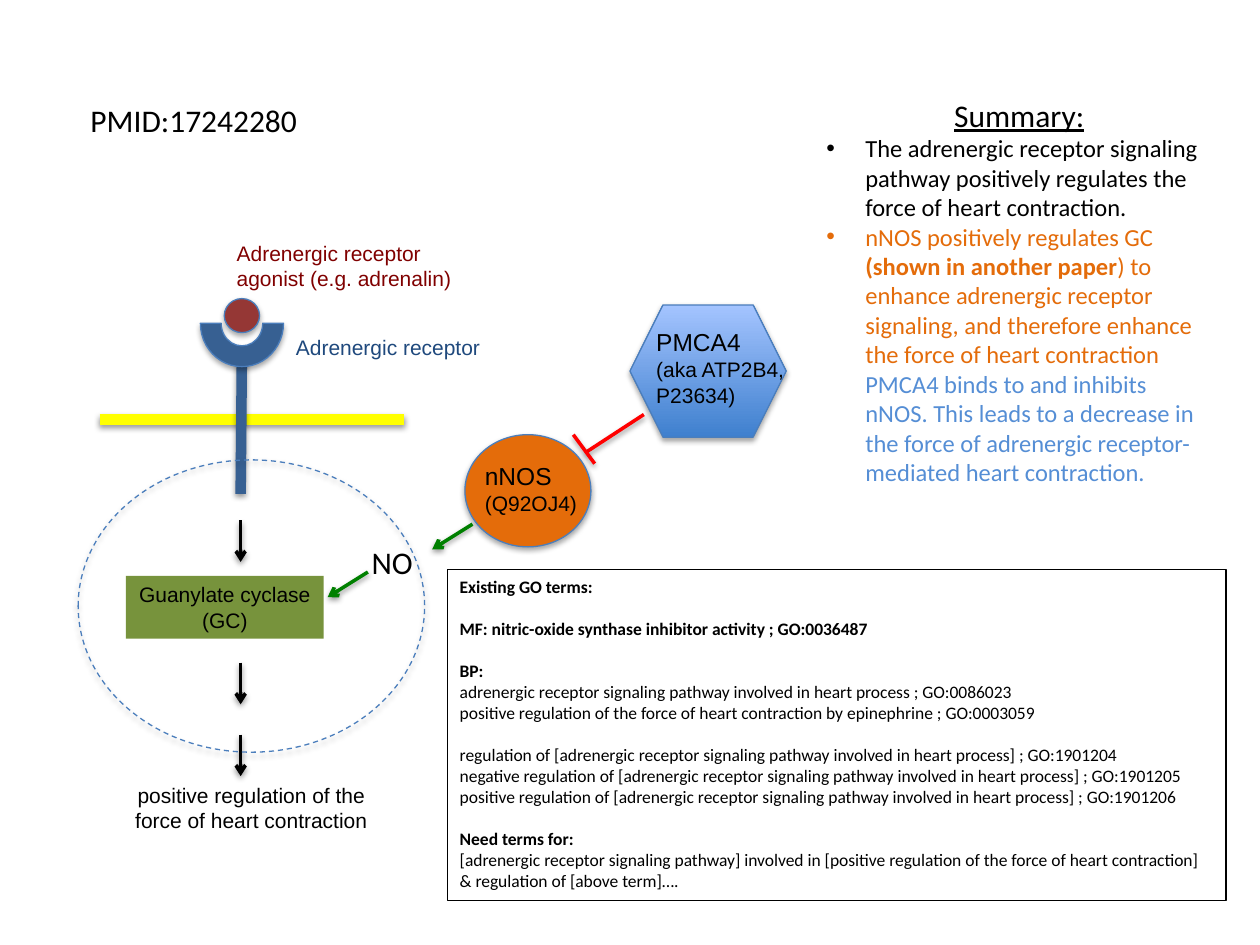
from lxml import etree
from pptx import Presentation, util as u
from pptx.dml.color import RGBColor
from pptx.enum import dml, shapes, text
from pptx.oxml.ns import qn

PX = 9144
BLACK = RGBColor(0x00, 0x00, 0x00)
NAVY = RGBColor(0x1F, 0x49, 0x7D)
RECEPTOR = RGBColor(0x37, 0x60, 0x92)
OUTLINE = RGBColor(0x4B, 0x7E, 0xBC)
SKY = RGBColor(0x55, 0x8E, 0xD5)
GRADIENT = RGBColor(0x3F, 0x80, 0xCE), RGBColor(0xA4, 0xC4, 0xFF)
AGONIST = RGBColor(0x95, 0x37, 0x35)
MAROON = RGBColor(0x80, 0x00, 0x00)
OLIVE = RGBColor(0x77, 0x93, 0x3C)
ORANGE = RGBColor(0xE4, 0x6C, 0x0A)
YELLOW = RGBColor(0xFF, 0xFF, 0x00)
RED = RGBColor(0xFF, 0x00, 0x00)
GREEN = RGBColor(0x00, 0x80, 0x00)

SHAPE = shapes.MSO_SHAPE
CENTER = text.PP_ALIGN.CENTER

MEMBRANE_AND_STEM = [
    ((79, 333), (321, 333), YELLOW, 6, False),
    ((192, 281), (191, 392), RECEPTOR, 6, False),
]
PATHWAY_ARROWS = [
    ((191, top), (191, top + 33), BLACK, 2, True) for top in (413, 526, 583)
]
NNOS_ARROW = ((375, 416), (343, 436), GREEN, 2, True)
INHIBITION = [
    ((511, 329), (465, 359), RED, 2, False),
    ((455, 345), (472, 368), RED, 2, False),
]
NO_ARROW = ((292, 454), (260, 474), GREEN, 2, True)

LABELS = [
    ((225, 261, 215, 30), [("Adrenergic receptor", 12)], "Arial", NAVY, None),
    ((178, 186, 215, 50), [("Adrenergic receptor agonist (e.g. adrenalin)", 12)], "Arial", MAROON, None),
    ((79, 616, 241, 50), [("positive regulation of the force of heart contraction", 12)], "Arial", BLACK, CENTER),
    ((375, 361, 104, 54), [("nNOS", 14), ("(Q92OJ4)", 12)], "Arial", BLACK, None),
    ((511, 255, 128, 74), [("PMCA4", 14), ("(aka ATP2B4, P23634)", 12)], "Arial", BLACK, None),
    ((62, 75, 233, 40), [("PMID:17242280", 18)], "Calibri", BLACK, None),
    ((285, 426, 69, 40), [("NO", 18)], "Calibri", BLACK, None),
]

GO_GROUPS = [
    [("Existing GO terms:", True)],
    [("MF: nitric-oxide synthase inhibitor activity ; GO:0036487", True)],
    [
        ("BP:", True),
        ("adrenergic receptor signaling pathway involved in heart process ; GO:0086023", False),
        ("positive regulation of the force of heart contraction by epinephrine ; GO:0003059", False),
    ],
    [
        (f"{kind} of [adrenergic receptor signaling pathway involved in heart process] ; GO:{number}", False)
        for kind, number in (
            ("regulation", 1901204),
            ("negative regulation", 1901205),
            ("positive regulation", 1901206),
        )
    ],
    [
        ("Need terms for:", True),
        ("[adrenergic receptor signaling pathway] involved in "
         "[positive regulation of the force of heart contraction]", False),
        ("& regulation of [above term]….", False),
    ],
]

SUMMARY = [
    [("The adrenergic receptor signaling pathway positively regulates the force of heart contraction.",
      BLACK, False)],
    [
        ("nNOS positively regulates GC ", ORANGE, False),
        ("(shown in another paper", ORANGE, True),
        (") to enhance adrenergic receptor signaling, and therefore enhance the force of heart contraction ",
         ORANGE, False),
        ("PMCA4 binds to and inhibits nNOS. This leads to a decrease in the force of "
         "adrenergic receptor-mediated heart contraction.", SKY, False),
    ],
]


def px(values):
    return [value * PX for value in values]


def add_shadow(properties, alpha):
    effects = properties.find(qn("a:effectLst"))
    if effects is None:
        effects = etree.SubElement(properties, qn("a:effectLst"))
    shadow = etree.SubElement(effects, qn("a:outerShdw"), blurRad="40000",
                              dist="22000", dir="5400000", rotWithShape="0")
    color = etree.SubElement(shadow, qn("a:srgbClr"), val="000000")
    etree.SubElement(color, qn("a:alpha"), val=str(alpha * 1000))


def add_line(slide, start, end, color, width, arrow):
    line = slide.shapes.add_connector(shapes.MSO_CONNECTOR.STRAIGHT, *px(start + end))
    line.line.color.rgb = color
    line.line.width = u.Pt(width)
    if arrow:
        etree.SubElement(line.line._get_or_add_ln(), qn("a:tailEnd"), type="arrow")
    add_shadow(line._element.spPr, 38)


def add_figure(slide, kind, box, fill=None, outline=OUTLINE, shadow=True):
    shape = slide.shapes.add_shape(kind, *px(box))
    shape.shadow.inherit = False
    if fill is None:
        shape.fill.background()
    else:
        shape.fill.solid()
        shape.fill.fore_color.rgb = fill
    if outline is None:
        shape.line.fill.background()
    else:
        shape.line.color.rgb = outline
        shape.line.width = u.Pt(0.75)
    if shadow:
        add_shadow(shape._element.spPr, 35)
    return shape


def add_paragraph(frame, words, size, name, color, align=None, bold=None):
    paragraph = frame.paragraphs[0]
    if paragraph.runs:
        paragraph = frame.add_paragraph()
    paragraph.alignment = align or text.PP_ALIGN.LEFT
    paragraph.add_run().text = words
    paragraph.font.size = u.Pt(size)
    paragraph.font.name = name
    paragraph.font.color.rgb = color
    paragraph.font.bold = bold
    return paragraph


def open_frame(shape):
    frame = shape.text_frame
    frame.word_wrap = True
    frame.vertical_anchor = text.MSO_ANCHOR.TOP
    return frame


def add_label(slide, box, lines, name, color, align):
    frame = open_frame(slide.shapes.add_textbox(*px(box)))
    for words, size in lines:
        add_paragraph(frame, words, size, name, color, align)


def add_go_terms(slide):
    box = add_figure(slide, SHAPE.RECTANGLE, (355, 452, 618, 263), None, BLACK, False)
    frame = open_frame(box)
    for group_index, group in enumerate(GO_GROUPS):
        for line_index, (words, bold) in enumerate(group):
            paragraph = add_paragraph(frame, words, 10, "Calibri", BLACK, bold=bold)
            if group_index and not line_index:
                paragraph.space_before = u.Pt(12)


def add_summary(slide):
    frame = open_frame(slide.shapes.add_textbox(*px((646, 71, 326, 323))))
    title = add_paragraph(frame, "Summary:", 18, "Calibri", BLACK, CENTER)
    title.font.underline = True
    for runs in SUMMARY:
        paragraph = frame.add_paragraph()
        properties = paragraph._p.get_or_add_pPr()
        properties.set("marL", str(31 * PX))
        properties.set("indent", str(-31 * PX))
        etree.SubElement(properties, qn("a:buFont"), typeface="Arial")
        etree.SubElement(properties, qn("a:buChar"), char="•")
        paragraph.font.size = u.Pt(14)
        paragraph.font.name = "Calibri"
        for words, color, bold in runs:
            run = paragraph.add_run()
            run.text = words
            run.font.color.rgb = color
            run.font.bold = bold


def main():
    presentation = Presentation()
    presentation.slide_width, presentation.slide_height = px((1000, 750))
    slide = presentation.slides.add_slide(presentation.slide_layouts[6])

    for line in MEMBRANE_AND_STEM:
        add_line(slide, *line)
    receptor = add_figure(slide, SHAPE.BLOCK_ARC, (159, 222, 66, 69), RECEPTOR)
    receptor.rotation = 180
    add_figure(slide, SHAPE.OVAL, (178, 237, 28, 27), AGONIST)
    for line in PATHWAY_ARROWS:
        add_line(slide, *line)

    cyclase = add_figure(slide, SHAPE.RECTANGLE, (100, 457, 157, 50), OLIVE, None, False)
    add_paragraph(open_frame(cyclase), "Guanylate cyclase (GC)", 12, "Arial", BLACK, CENTER)

    add_figure(slide, SHAPE.OVAL, (369, 345, 100, 89), ORANGE)
    add_line(slide, *NNOS_ARROW)
    pump = add_figure(slide, SHAPE.HEXAGON, (500, 242, 124, 105))
    pump.fill.gradient()
    pump.fill.gradient_angle = 90
    for stop, color in zip(pump.fill.gradient_stops, GRADIENT):
        stop.color.rgb = color
    for line in INHIBITION:
        add_line(slide, *line)

    add_go_terms(slide)
    add_summary(slide)
    cell = add_figure(slide, SHAPE.OVAL, (62, 365, 275, 232))
    cell.line.dash_style = dml.MSO_LINE.DASH
    add_line(slide, *NO_ARROW)
    for label in LABELS:
        add_label(slide, *label)
    presentation.save("out.pptx")


if __name__ == "__main__":
    main()
